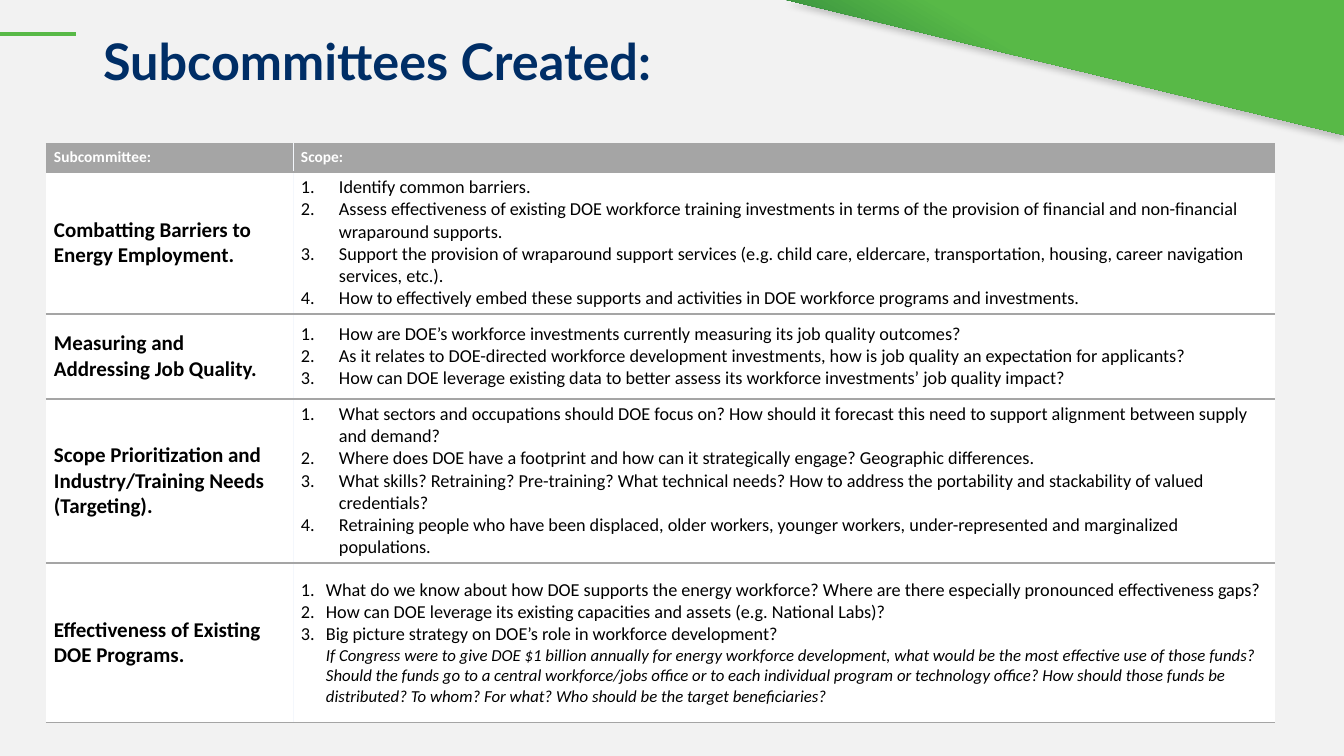
from copy import deepcopy

from lxml.etree import SubElement
from pptx import Presentation
from pptx.dml.color import RGBColor
from pptx.enum.shapes import MSO_CONNECTOR, MSO_SHAPE
from pptx.enum.text import MSO_ANCHOR, PP_ALIGN
from pptx.oxml import parse_xml
from pptx.oxml.ns import nsdecls, qn
from pptx.util import Pt

EMU_PER_PX = 914400 / 100.8
COLORS = {
    "background": "F2F2F2", "green": "58B947", "dark_green": "156737",
    "navy": "002E66", "gray": "A5A5A5", "divider": "F4F7FC",
    "white": "FFFFFF", "black": "000000",
}
TITLE_FORMAT = {"name": "Lato", "size": Pt(36), "bold": True}
HEADER_FORMAT = {"name": "Calibri", "size": Pt(11), "bold": True}
NAME_FORMAT = {"name": "Calibri", "size": Pt(15), "bold": True}
SCOPE_FORMAT = {"name": "Calibri", "size": Pt(13), "bold": False}
NOTE_FORMAT = {"name": "Calibri", "size": Pt(12), "bold": False, "italic": True}

HEADERS = ["Subcommittee:", "Scope:"]
COLUMN_WIDTHS = [247, 982]
HEADER_HEIGHT = 28

# Each row: name, height, hanging indent, numbered scope items
SUBCOMMITTEES = [
    ("Combatting Barriers to Energy Employment.", 142, 38, [
        "Identify common barriers.",
        "Assess effectiveness of existing DOE workforce training investments in terms of "
        "the provision of financial and non-financial wraparound supports.",
        "Support the provision of wraparound support services (e.g. child care, eldercare, "
        "transportation, housing, career navigation services, etc.).",
        "How to effectively embed these supports and activities in DOE workforce programs "
        "and investments.",
    ]),
    ("Measuring and Addressing Job Quality.", 85, 38, [
        "How are DOE’s workforce investments currently measuring its job quality outcomes?",
        "As it relates to DOE-directed workforce development investments, how is job "
        "quality an expectation for applicants?",
        "How can DOE leverage existing data to better assess its workforce investments’ "
        "job quality impact?",
    ]),
    ("Scope Prioritization and Industry/Training Needs (Targeting).", 164, 38, [
        "What sectors and occupations should DOE focus on? How should it forecast this need "
        "to support alignment between supply and demand?",
        "Where does DOE have a footprint and how can it strategically engage? "
        "Geographic differences.",
        "What skills? Retraining? Pre-training? What technical needs? How to address the "
        "portability and stackability of valued credentials?",
        "Retraining people who have been displaced, older workers, younger workers, "
        "under-represented and marginalized populations.",
    ]),
    ("Effectiveness of Existing DOE Programs.", 160, 25, [
        "What do we know about how DOE supports the energy workforce? Where are there "
        "especially pronounced effectiveness gaps?",
        "How can DOE leverage its existing capacities and assets (e.g. National Labs)?",
        "Big picture strategy on DOE’s role in workforce development?",
    ]),
]
CONGRESS_NOTE = (
    "If Congress were to give DOE $1 billion annually for energy workforce development, what "
    "would be the most effective use of those funds? Should the funds go to a central "
    "workforce/jobs office or to each individual program or technology office? How should "
    "those funds be distributed? To whom? For what? Who should be the target beneficiaries?"
)


def px(length):
    return round(length * EMU_PER_PX)


def rgb(color):
    return RGBColor.from_string(COLORS[color])


def add_text(paragraph, text, text_format, color):
    run = paragraph.add_run()
    run.text = text
    for attribute, value in text_format.items():
        setattr(run.font, attribute, value)
    run.font.color.rgb = rgb(color)
    return run


def add_corner(slide):
    corner = slide.shapes.add_shape(
        MSO_SHAPE.ISOSCELES_TRIANGLE, px(787), 0, px(557), px(135))
    corner.rotation = 180
    corner.adjustments[0] = 0
    corner.line.fill.background()
    corner.fill.gradient()
    corner.fill.gradient_angle = 240
    stops = zip(corner.fill.gradient_stops, [("dark_green", 0), ("green", 0.48)])
    for stop, (color, position) in stops:
        stop.color.rgb = rgb(color)
        stop.position = position
    corner._element.spPr.append(parse_xml(
        f'<a:effectLst {nsdecls("a")}><a:outerShdw blurRad="{Pt(5)}" dist="{Pt(3)}" '
        f'dir="5400000" rotWithShape="0"><a:srgbClr val="{COLORS["black"]}">'
        '<a:alpha val="20000"/></a:srgbClr></a:outerShdw></a:effectLst>'))


def add_accent_line(slide):
    accent = slide.shapes.add_connector(
        MSO_CONNECTOR.STRAIGHT, px(76), px(34), 0, px(34))
    accent.line.color.rgb = rgb("green")
    accent.line.width = Pt(3.5)
    SubElement(accent._element.spPr, qn("a:effectLst"))


def fill_title(slide):
    title = slide.shapes.title
    title.left, title.top, title.width, title.height = map(px, (93, 14, 1126, 101))
    title.text_frame.vertical_anchor = MSO_ANCHOR.MIDDLE
    paragraph = title.text_frame.paragraphs[0]
    paragraph.alignment = PP_ALIGN.LEFT
    paragraph.line_spacing = 0.9
    add_text(paragraph, "Subcommittees Created:", TITLE_FORMAT, "navy")


def set_borders(cell, sides):
    """Draw the given sides (tag suffix to colour and width); None hides a side."""
    properties = cell._tc.get_or_add_tcPr()
    for index, (side, style) in enumerate(sides.items()):
        if style:
            color, width = style
            fill = f'<a:solidFill><a:srgbClr val="{COLORS[color]}"/></a:solidFill>'
        else:
            width, fill = 0, "<a:noFill/>"
        properties.insert(index, parse_xml(
            f'<a:ln{side} {nsdecls("a")} w="{Pt(width)}">{fill}</a:ln{side}>'))


def style_cell(cell, column, fill_color, anchor):
    cell.fill.solid()
    cell.fill.fore_color.rgb = rgb(fill_color)
    cell.vertical_anchor = anchor
    cell.margin_left = cell.margin_right = px(8)
    cell.margin_top = cell.margin_bottom = px(4)
    divider, rule = ("divider", 0.75), ("gray", 0.98)
    set_borders(cell, {
        "L": divider if column else None,
        "R": None if column else divider,
        "T": rule,
        "B": rule,
    })


def add_numbered_items(cell, items, indent):
    for index, item in enumerate(items):
        frame = cell.text_frame
        paragraph = frame.add_paragraph() if index else frame.paragraphs[0]
        properties = paragraph._p.get_or_add_pPr()
        properties.set("marL", str(px(indent)))
        properties.set("indent", str(-px(indent)))
        SubElement(properties, qn("a:buFont"), typeface="+mj-lt")
        SubElement(properties, qn("a:buAutoNum"), type="arabicPeriod")
        add_text(paragraph, item, SCOPE_FORMAT, "black")


def add_note(paragraph, note):
    """Put an italic note on a new line under the last numbered item."""
    item_properties = paragraph.runs[-1]._r.rPr
    paragraph.add_line_break()
    paragraph._p.find(qn("a:br")).append(deepcopy(item_properties))
    add_text(paragraph, note, NOTE_FORMAT, "black")


def add_subcommittee_table(slide):
    heights = [HEADER_HEIGHT] + [height for _, height, _, _ in SUBCOMMITTEES]
    table = slide.shapes.add_table(
        len(heights), len(HEADERS), px(46), px(144),
        px(sum(COLUMN_WIDTHS)), px(sum(heights))).table
    table.horz_banding = False
    for column, width in zip(table.columns, COLUMN_WIDTHS):
        column.width = px(width)
    for row, height in zip(table.rows, heights):
        row.height = px(height)

    for column, header in enumerate(HEADERS):
        cell = table.cell(0, column)
        style_cell(cell, column, "gray", MSO_ANCHOR.TOP)
        add_text(cell.text_frame.paragraphs[0], header, HEADER_FORMAT, "white")
    for row, (name, _, indent, items) in enumerate(SUBCOMMITTEES, start=1):
        name_cell, scope_cell = table.cell(row, 0), table.cell(row, 1)
        for column, cell in enumerate((name_cell, scope_cell)):
            style_cell(cell, column, "white", MSO_ANCHOR.MIDDLE)
        add_text(name_cell.text_frame.paragraphs[0], name, NAME_FORMAT, "black")
        add_numbered_items(scope_cell, items, indent)
    add_note(scope_cell.text_frame.paragraphs[-1], CONGRESS_NOTE)


def main():
    presentation = Presentation()
    presentation.slide_width, presentation.slide_height = px(1344), px(756)
    slide = presentation.slides.add_slide(presentation.slide_layouts[5])
    slide.background.fill.solid()
    slide.background.fill.fore_color.rgb = rgb("background")
    add_corner(slide)
    add_accent_line(slide)
    fill_title(slide)
    add_subcommittee_table(slide)
    presentation.save("out.pptx")


if __name__ == "__main__":
    main()
